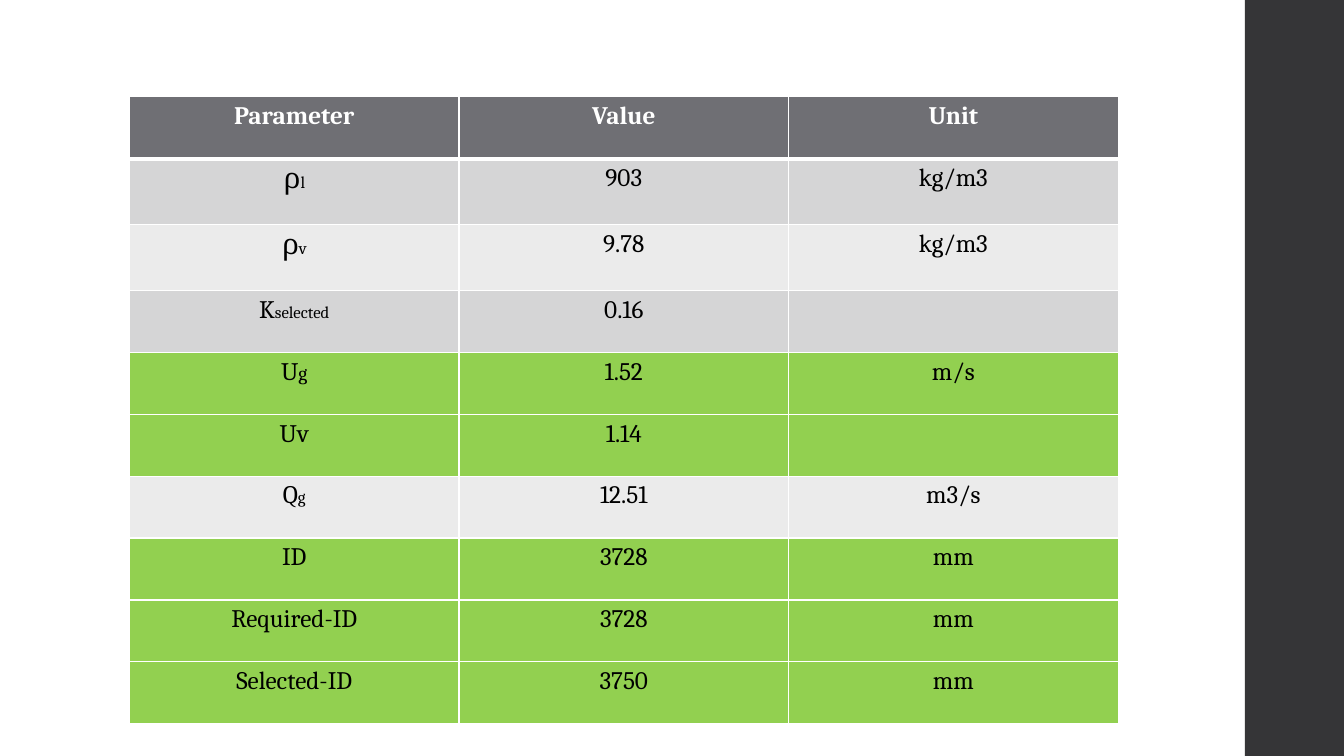
from dataclasses import dataclass

from lxml import etree
from pptx import Presentation
from pptx import util as u
from pptx.dml.color import RGBColor
from pptx.enum import shapes, text
from pptx.oxml import ns

WHITE = RGBColor(0xFF, 0xFF, 0xFF)
BLACK = RGBColor(0x00, 0x00, 0x00)
SIDEBAR = RGBColor(0x35, 0x35, 0x37)
HEADER = RGBColor(0x6F, 0x6F, 0x74)
DARK_BAND = RGBColor(0xD5, 0xD5, 0xD6)
LIGHT_BAND = RGBColor(0xEB, 0xEB, 0xEB)
GREEN = RGBColor(0x92, 0xD0, 0x50)

FONT = "Cambria"
BODY_SIZE = 18
ROW_HEIGHT = 44.2
TALL_ROW_HEIGHT = 47.1
COLUMN_WIDTH = 235.4


@dataclass
class Parameter:
    symbol: str
    value: str
    unit: str
    fill: RGBColor
    subscript: str = ""
    symbol_size: int = BODY_SIZE
    subscript_size: int = 12
    height: float = ROW_HEIGHT


PARAMETERS = [
    Parameter("ρ", "903", "kg/m3", DARK_BAND, "l", 20, height=TALL_ROW_HEIGHT),
    Parameter("ρ", "9.78", "kg/m3", LIGHT_BAND, "v", 20, height=TALL_ROW_HEIGHT),
    Parameter("K", "0.16", "", DARK_BAND, "selected"),
    Parameter("U", "1.52", "m/s", GREEN, "g", subscript_size=14),
    Parameter("Uv", "1.14", "", GREEN),
    Parameter("Q", "12.51", "m3/s", LIGHT_BAND, "g"),
    Parameter("ID", "3728", "mm", GREEN),
    Parameter("Required-ID", "3728", "mm", GREEN),
    Parameter("Selected-ID", "3750", "mm", GREEN),
]


def format_run(run, size: float, color: RGBColor, bold: bool) -> None:
    run.font.name = FONT
    run.font.size = u.Pt(size)
    run.font.color.rgb = color
    run.font.bold = bold


def set_borders(cell, bottom_width: float) -> None:
    """Add white borders; they must come before the fill in the cell properties."""
    properties = cell._tc.get_or_add_tcPr()
    widths = {"a:lnL": 1, "a:lnR": 1, "a:lnT": 1, "a:lnB": bottom_width}
    for index, (tag, width) in enumerate(widths.items()):
        line = etree.Element(ns.qn(tag), w=str(u.Pt(width)))
        fill = etree.SubElement(line, ns.qn("a:solidFill"))
        etree.SubElement(fill, ns.qn("a:srgbClr"), val=str(WHITE))
        properties.insert(index, line)


def fill_cell(cell, content: str, fill: RGBColor, size: float = BODY_SIZE,
              color: RGBColor = BLACK, bold: bool = False, bottom_width: float = 1) -> None:
    cell.fill.solid()
    cell.fill.fore_color.rgb = fill
    set_borders(cell, bottom_width)
    paragraph = cell.text_frame.paragraphs[0]
    paragraph.alignment = text.PP_ALIGN.CENTER
    if content:
        paragraph.text = content
        format_run(paragraph.runs[0], size, color, bold)


def add_sidebar(slide) -> None:
    sidebar = slide.shapes.add_shape(
        shapes.MSO_SHAPE.RECTANGLE, u.Pt(889.2), u.Pt(0), u.Pt(72), u.Pt(540))
    sidebar.shadow.inherit = False
    sidebar.fill.solid()
    sidebar.fill.fore_color.rgb = SIDEBAR
    sidebar.line.fill.background()


def add_parameter_table(slide) -> None:
    heights = [ROW_HEIGHT] + [parameter.height for parameter in PARAMETERS]
    table = slide.shapes.add_table(
        len(heights), 3, u.Pt(92.5), u.Pt(69.2),
        u.Pt(3 * COLUMN_WIDTH), u.Pt(sum(heights))).table
    for column in table.columns:
        column.width = u.Pt(COLUMN_WIDTH)
    for row, height in zip(table.rows, heights):
        row.height = u.Pt(height)

    # Header row
    for column, title in enumerate(("Parameter", "Value", "Unit")):
        fill_cell(table.cell(0, column), title, HEADER,
                  color=WHITE, bold=True, bottom_width=3)

    # Parameter rows
    for row, parameter in enumerate(PARAMETERS, start=1):
        symbol_cell = table.cell(row, 0)
        fill_cell(symbol_cell, parameter.symbol, parameter.fill, parameter.symbol_size)
        if parameter.subscript:
            run = symbol_cell.text_frame.paragraphs[0].add_run()
            run.text = parameter.subscript
            format_run(run, parameter.subscript_size, BLACK, False)
        fill_cell(table.cell(row, 1), parameter.value, parameter.fill)
        fill_cell(table.cell(row, 2), parameter.unit, parameter.fill)


def main() -> None:
    presentation = Presentation()
    presentation.slide_width = u.Pt(960)
    presentation.slide_height = u.Pt(540)
    slide = presentation.slides.add_slide(presentation.slide_layouts[6])
    add_sidebar(slide)
    add_parameter_table(slide)
    presentation.save("out.pptx")


if __name__ == "__main__":
    main()
